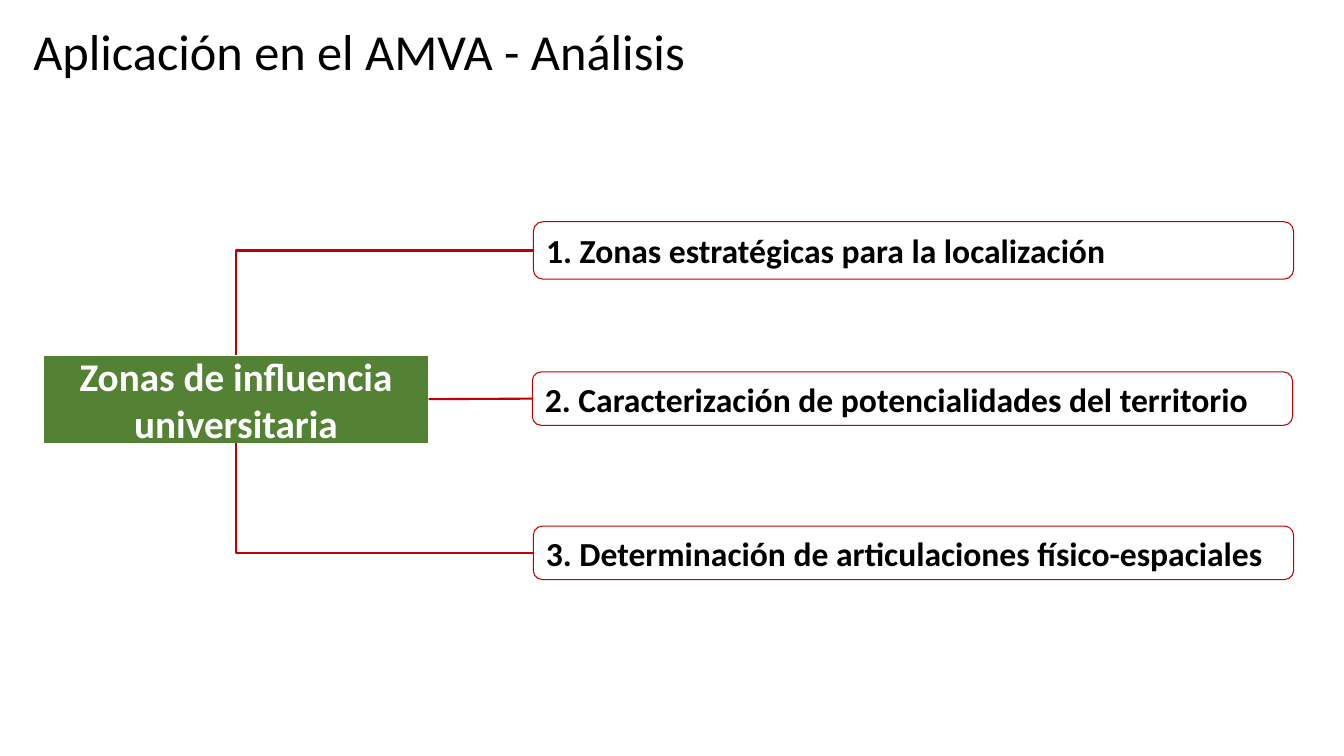
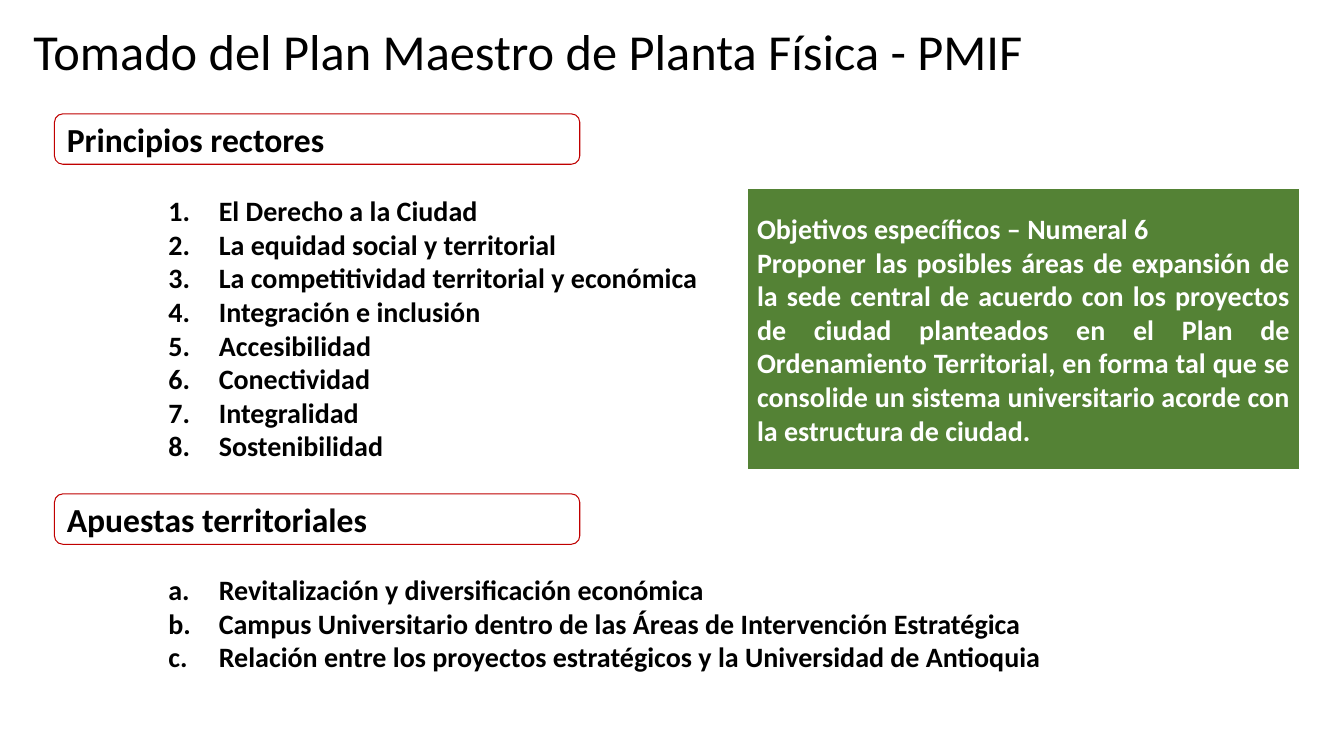
from dataclasses import dataclass

from lxml.etree import SubElement
from pptx import Presentation
from pptx.dml.color import RGBColor
from pptx.enum.shapes import MSO_CONNECTOR as Link, MSO_SHAPE as Shape
from pptx.enum.text import MSO_ANCHOR as Anchor, MSO_AUTO_SIZE as AutoSize, PP_ALIGN as Align
from pptx.oxml.ns import qn
from pptx.util import Inches, Pt


@dataclass(frozen=True)
class Theme:
    font: str = "Calibri"
    black: RGBColor = RGBColor(0, 0, 0)
    white: RGBColor = RGBColor(255, 255, 255)
    green: RGBColor = RGBColor(0x54, 0x82, 0x35)
    red: RGBColor = RGBColor(0xC0, 0, 0)
    title: int = 36
    hub: int = 28
    heading: int = 24
    body: int = 20


THEME = Theme()
TITLE_ONLY, TWO_CONTENT = 5, 3
TOP, LEFT, BOTTOM, RIGHT = range(4)

ANALYSIS_TITLE = "Aplicación en el AMVA - Análisis"
HUB = ("Zonas de influencia universitaria", (0.43, 3.52, 3.82, 0.88))
BRANCHES = [
    ("1. Zonas estratégicas para la localización", (5.29, 2.2, 7.54, 0.57), TOP),
    ("2. Caracterización de potencialidades del territorio", (5.28, 3.69, 7.54, 0.53), RIGHT),
    ("3. Determinación de articulaciones físico-espaciales", (5.29, 5.22, 7.54, 0.53), BOTTOM),
]

PLAN_TITLE = "Tomado del Plan Maestro de Planta Física - PMIF"
SECTIONS = [
    {
        "heading": "Principios rectores",
        "heading_area": (0.54, 1.13, 5.21, 0.5),
        "items": [
            "El Derecho a la Ciudad",
            "La equidad social y territorial",
            "La competitividad territorial y económica",
            "Integración e inclusión",
            "Accesibilidad",
            "Conectividad",
            "Integralidad",
            "Sostenibilidad",
        ],
        "list_area": (1.57, 1.87, 5.58, 2.79),
        "numbering": "arabicPeriod",
    },
    {
        "heading": "Apuestas territoriales",
        "heading_area": (0.54, 4.9, 5.21, 0.5),
        "items": [
            "Revitalización y diversificación económica",
            "Campus Universitario dentro de las Áreas de Intervención Estratégica",
            "Relación entre los proyectos estratégicos y la Universidad de Antioquia",
        ],
        "list_area": (1.57, 5.63, 9.65, 1.11),
        "numbering": "alphaLcPeriod",
    },
]
OBJECTIVE = (
    "Objetivos específicos – Numeral 6\n"
    "Proponer las posibles áreas de expansión de la sede central de acuerdo con los "
    "proyectos de ciudad planteados en el Plan de Ordenamiento Territorial, en forma tal "
    "que se consolide un sistema universitario acorde con la estructura de ciudad.",
    (7.41, 1.87, 5.48, 2.79),
)


def write(frame, text, size, color, align, bold=True, anchor=Anchor.MIDDLE):
    frame.text = text
    frame.word_wrap = True
    frame.auto_size = AutoSize.NONE
    frame.vertical_anchor = anchor
    for paragraph in frame.paragraphs:
        paragraph.alignment = align
        paragraph.space_before = Pt(0)
        for run in paragraph.runs:
            run.font.name = THEME.font
            run.font.size = Pt(size)
            run.font.bold = bold
            run.font.color.rgb = color


def place(placeholder, area):
    placeholder.left, placeholder.top, placeholder.width, placeholder.height = map(Inches, area)


def start_slide(deck, layout, text):
    slide = deck.slides.add_slide(deck.slide_layouts[layout])
    title = slide.shapes.title
    place(title, (0, 0.19, 13.33, 0.57))
    write(title.text_frame, text, THEME.title, THEME.black, Align.LEFT, bold=False)
    title.text_frame.margin_left = Inches(0.33)
    title.text_frame.paragraphs[0].line_spacing = 1.07
    return slide


def add_green_panel(slide, text, area, size, align):
    panel = slide.shapes.add_shape(Shape.RECTANGLE, *map(Inches, area))
    panel.shadow.inherit = False
    panel.fill.solid()
    panel.fill.fore_color.rgb = THEME.green
    panel.line.color.rgb = THEME.white
    panel.line.width = Pt(1)
    write(panel.text_frame, text, size, THEME.white, align)
    return panel


def add_heading(slide, text, area):
    heading = slide.shapes.add_shape(Shape.ROUNDED_RECTANGLE, *map(Inches, area))
    heading.shadow.inherit = False
    heading.fill.background()
    heading.line.color.rgb = THEME.red
    heading.line.width = Pt(0.75)
    write(heading.text_frame, text, THEME.heading, THEME.black, Align.LEFT)
    heading.text_frame.margin_top = heading.text_frame.margin_bottom = 0
    return heading


def join(slide, branch, hub, hub_side):
    link = slide.shapes.add_connector(Link.STRAIGHT, 0, 0, 0, 0)
    link.begin_connect(branch, LEFT)
    link.end_connect(hub, hub_side)
    link.line.color.rgb = THEME.red
    link.line.width = Pt(1.5)
    properties = link._element.spPr
    if hub_side != RIGHT:
        properties.find(qn("a:prstGeom")).set("prst", "bentConnector2")
    SubElement(properties, qn("a:effectLst"))


def fill_list(placeholder, section):
    place(placeholder, section["list_area"])
    write(placeholder.text_frame, "\n".join(section["items"]), THEME.body, THEME.black,
          Align.LEFT, anchor=Anchor.TOP)
    for paragraph in placeholder.text_frame.paragraphs:
        properties = paragraph._p.get_or_add_pPr()
        properties.set("marL", str(Inches(0.5)))
        properties.set("indent", str(-Inches(0.5)))
        SubElement(properties, qn("a:buFont"), typeface=THEME.font)
        SubElement(properties, qn("a:buAutoNum"), type=section["numbering"])


def build_analysis(deck):
    slide = start_slide(deck, TITLE_ONLY, ANALYSIS_TITLE)
    hub = add_green_panel(slide, *HUB, THEME.hub, Align.CENTER)
    for text, area, hub_side in BRANCHES:
        join(slide, add_heading(slide, text, area), hub, hub_side)


def build_plan(deck):
    slide = start_slide(deck, TWO_CONTENT, PLAN_TITLE)
    lists = [holder for holder in slide.placeholders if holder.placeholder_format.idx in (1, 2)]
    for holder, section in zip(lists, SECTIONS):
        add_heading(slide, section["heading"], section["heading_area"])
        fill_list(holder, section)
    add_green_panel(slide, *OBJECTIVE, THEME.body, Align.JUSTIFY)


def main():
    deck = Presentation()
    deck.slide_width, deck.slide_height = Inches(13.33), Inches(7.5)
    build_analysis(deck)
    build_plan(deck)
    deck.save("out.pptx")


if __name__ == "__main__":
    main()
